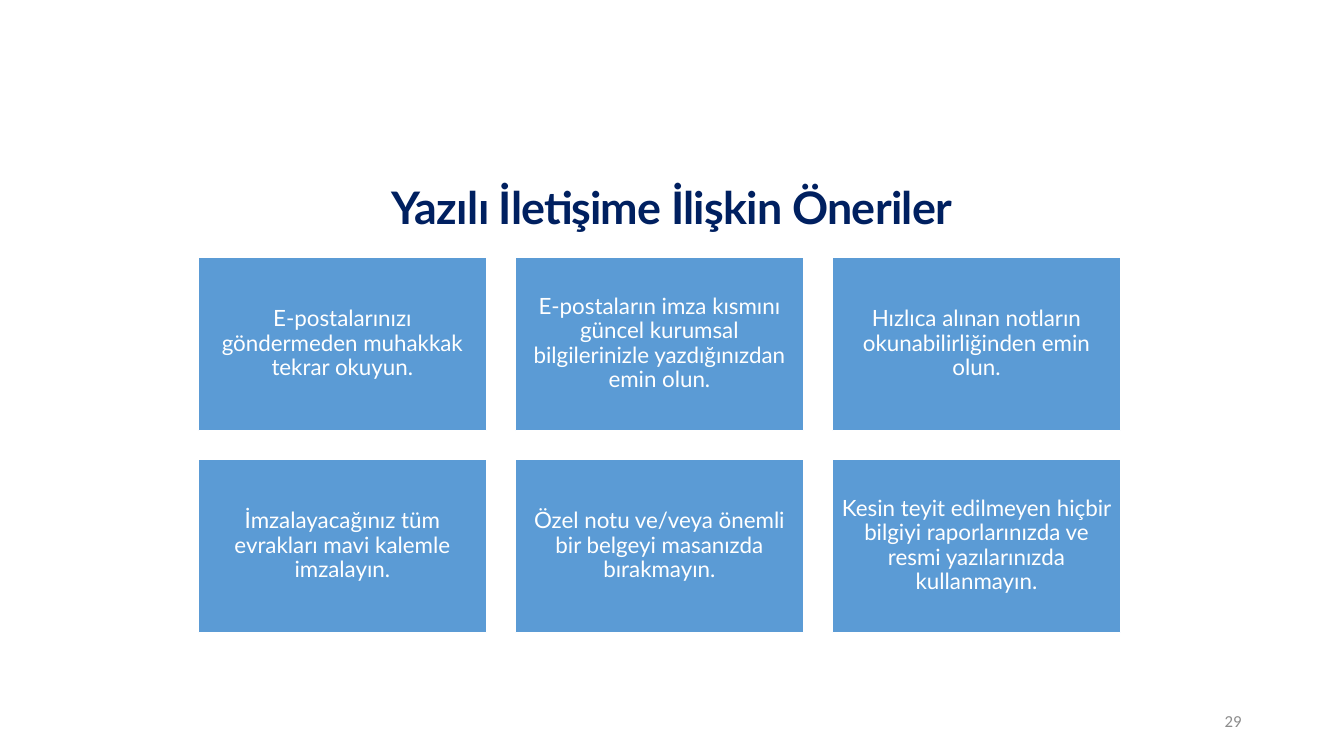
from pptx import Presentation
from pptx.dml.color import RGBColor
from pptx.enum.shapes import MSO_SHAPE
from pptx.enum.text import MSO_ANCHOR, PP_ALIGN
from pptx.util import Cm, Pt

NAVY = RGBColor(0x00, 0x20, 0x60)
BLUE = RGBColor(0x5B, 0x9B, 0xD5)
WHITE = RGBColor(0xFF, 0xFF, 0xFF)
GRAY = RGBColor(0x8C, 0x8C, 0x8C)

TIPS = [
    "E-postalarınızı göndermeden muhakkak tekrar okuyun.",
    "E-postaların imza kısmını güncel kurumsal bilgilerinizle yazdığınızdan emin olun.",
    "Hızlıca alınan notların okunabilirliğinden emin olun.",
    "İmzalayacağınız tüm evrakları mavi kalemle imzalayın.",
    "Özel notu ve/veya önemli bir belgeyi masanızda bırakmayın.",
    "Kesin teyit edilmeyen hiçbir bilgiyi raporlarınızda ve resmi yazılarınızda kullanmayın.",
]


def write(shape, text, font, size, color, align):
    frame = shape.text_frame
    frame.text = text
    frame.word_wrap = True
    frame.vertical_anchor = MSO_ANCHOR.MIDDLE
    para = frame.paragraphs[0]
    para.alignment = align
    para.line_spacing = 0.9
    run = para.runs[0]
    run.font.name = font
    run.font.size = Pt(size)
    run.font.color.rgb = color
    return run


deck = Presentation()
deck.slide_width = Cm(33.87)
deck.slide_height = Cm(19.05)
slide = deck.slides.add_slide(deck.slide_layouts[6])

title = slide.shapes.add_textbox(Cm(2.33), Cm(3.45), Cm(29.21), Cm(3.68))
run = write(title, "Yazılı İletişime İlişkin Öneriler", "Lato", 32, NAVY, PP_ALIGN.CENTER)
run.font.bold = True
run._r.get_or_add_rPr().set("spc", "-50")

for i, tip in enumerate(TIPS):
    row, col = divmod(i, 3)
    card = slide.shapes.add_shape(
        MSO_SHAPE.RECTANGLE,
        Cm(5 + 7.99 * col), Cm(6.48 + 5.09 * row), Cm(7.26), Cm(4.37),
    )
    card.shadow.inherit = False
    card.fill.solid()
    card.fill.fore_color.rgb = BLUE
    card.line.color.rgb = WHITE
    card.line.width = Pt(1)
    write(card, tip, "Lato", 16, WHITE, PP_ALIGN.CENTER)
    frame = card.text_frame
    frame.margin_left = frame.margin_right = Cm(0.17)
    frame.margin_top = frame.margin_bottom = Cm(0.17)

number = slide.shapes.add_textbox(Cm(23.92), Cm(17.66), Cm(7.62), Cm(1.01))
run = write(number, "29", "Calibri", 12, GRAY, PP_ALIGN.RIGHT)
number.text_frame.paragraphs[0].line_spacing = 1.0

deck.save("out.pptx")
